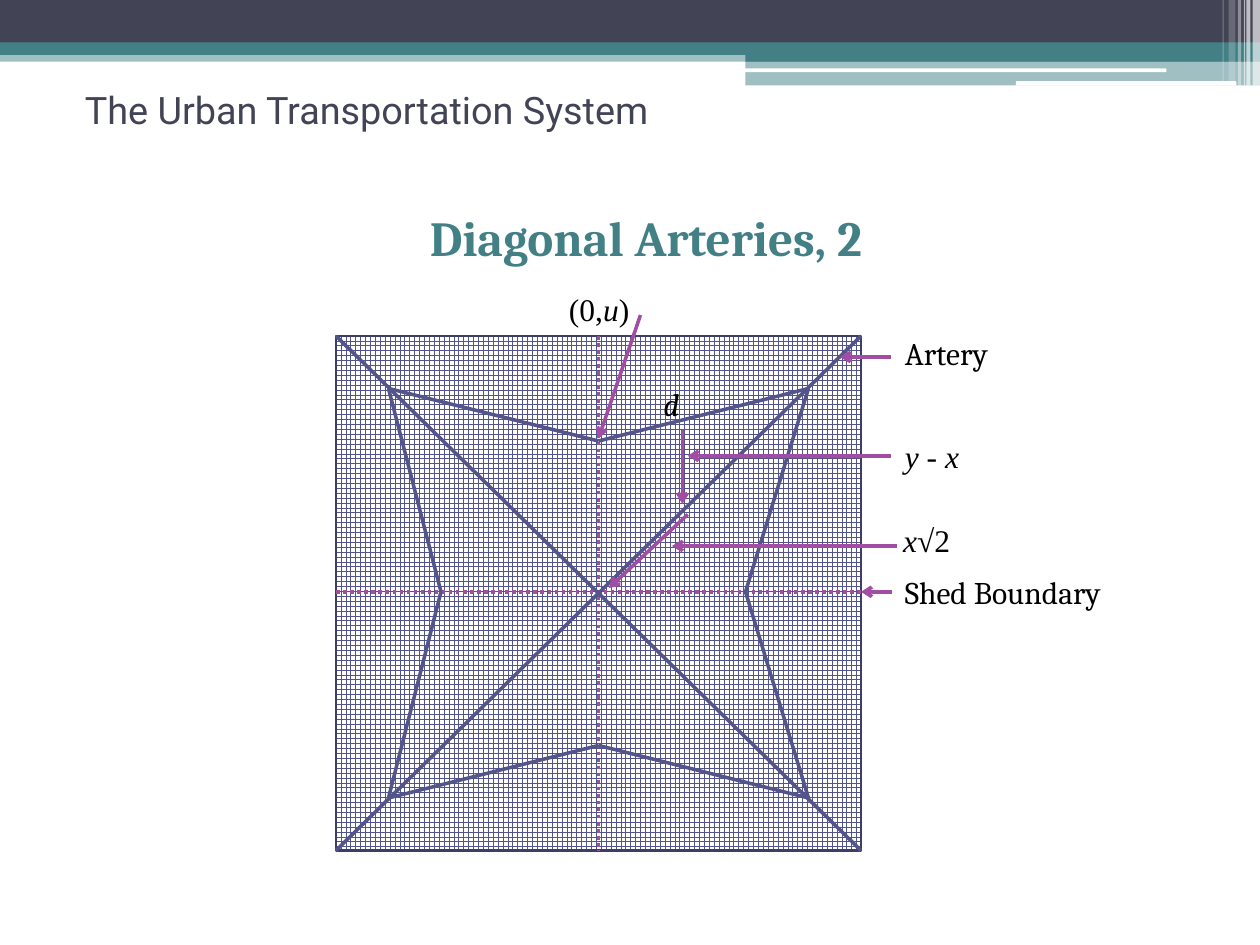
from lxml.etree import SubElement
from pptx import Presentation
from pptx.dml.color import RGBColor
from pptx.enum.dml import MSO_LINE, MSO_PATTERN
from pptx.enum.shapes import MSO_CONNECTOR, MSO_SHAPE
from pptx.enum.text import MSO_ANCHOR, PP_ALIGN
from pptx.oxml.ns import qn
from pptx.util import Pt

NAVY, TEAL, WHITE, BLACK = "424456", "438086", "FFFFFF", "000000"
INDIGO, EDGE, PURPLE = "53548A", "3D3E66", "A04DA3"
SERIF, SANS, MATH = "Cambria", "Roboto", "Times New Roman"

# left, top, width, height, colour, opacity in percent
BANDS = [
    (0, 28.8, 720, 6.5, TEAL, 50),
    (0, 0, 720, 24.5, NAVY, 100),
    (0, 24.2, 720, 7.2, TEAL, 100),
    (426, 28, 294, 7.2, TEAL, 100),
    (426, 34.9, 294, 14, TEAL, 50),
]
WHITE_BARS = [(425.5, 39.1, 241, 2.2), (580.5, 46.4, 126, 2.6)]
# left, width, height, opacity in percent
STRIPES = [
    (715.8, 4.2, 48.9, 65), (712.3, 2.2, 48.9, 65), (710.8, 0.7, 48.9, 60),
    (707.3, 2, 48.9, 40), (702, 4, 46.2, 20), (698.6, 0.7, 46.2, 30),
]

LEFT, TOP, RIGHT, BOTTOM = 192, 192, 492, 486
CENTER_X, CENTER_Y = 342, 338.2
BOUNDARIES = [((CENTER_X, TOP), (CENTER_X, BOTTOM)),
              ((RIGHT, CENTER_Y), (LEFT, CENTER_Y))]
ARTERIES = [((LEFT, BOTTOM), (RIGHT, TOP)), ((RIGHT, BOTTOM), (LEFT, TOP))]
STAR = [(222, 222), (CENTER_X, 252), (462, 222), (426, CENTER_Y),
        (462, 456), (CENTER_X, 426), (222, 456), (252, CENTER_Y)]
ARROWS = [
    ((393, 294), (348, 336)),
    ((366, 180), (342, 250.5)),
    ((390, 246), (390, 288)),
    ((509, 204), (480, 204)),
    ((509, 260.5), (393, 260.5)),
    ((512.5, 312), (384, 312)),
    ((510, CENTER_Y), (RIGHT, CENTER_Y)),
]
# left, top, width, font, spans of (text, italic)
LABELS = [
    (510, 187.5, 183.6, SERIF, [("Artery", False)]),
    (510, 324, 183.6, SERIF, [("Shed Boundary", False)]),
    (510, 246.2, 183.6, MATH, [("y - x", True)]),
    (509, 294, 183.6, MATH, [("x", True), ("√2", False)]),
    (318, 162, 96, MATH, [("(0,", False), ("u", True), (")", False)]),
    (372, 216.5, 36, SERIF, [("d", True)]),
]

deck = Presentation()
deck.slide_width, deck.slide_height = Pt(720), Pt(540)
page = deck.slides.add_slide(deck.slide_layouts[6])


def rgb(color):
    return RGBColor.from_string(color)


def add_block(left, top, width, height, color, opacity=100, kind=MSO_SHAPE.RECTANGLE):
    block = page.shapes.add_shape(kind, Pt(left), Pt(top), Pt(width), Pt(height))
    block.shadow.inherit = False
    block.line.fill.background()
    block.fill.solid()
    block.fill.fore_color.rgb = rgb(color)
    if opacity < 100:
        tint = block.fill._xPr.find(".//" + qn("a:srgbClr"))
        SubElement(tint, qn("a:alpha"), val=str(opacity * 1000))
    return block


def add_line(start, end, color, dash=None, arrow=False):
    line = page.shapes.add_connector(MSO_CONNECTOR.STRAIGHT, *map(Pt, start + end))
    line.line.color.rgb = rgb(color)
    line.line.width = Pt(2)
    if dash:
        line.line.dash_style = dash
    if arrow:
        SubElement(line.line._get_or_add_ln(), qn("a:tailEnd"), type="arrow")
    SubElement(line._element.spPr, qn("a:effectLst"))


def add_text(spans, left, top, width, height, font, size=18, color=BLACK, bold=False,
             align=PP_ALIGN.LEFT, anchor=MSO_ANCHOR.TOP, inset=7.2):
    """Add a one-paragraph box; spans are (text, italic) pairs."""
    box = page.shapes.add_textbox(Pt(left), Pt(top), Pt(width), Pt(height))
    frame = box.text_frame
    frame.word_wrap = True
    frame.vertical_anchor = anchor
    frame.margin_left = Pt(inset)
    para = frame.paragraphs[0]
    para.alignment = align
    for text, italic in spans:
        span = para.add_run()
        span.text = text
        span.font.name, span.font.size = font, Pt(size)
        span.font.bold, span.font.italic = bold, italic
        span.font.color.rgb = rgb(color)


for band in BANDS:
    add_block(*band)
for bar in WHITE_BARS:
    add_block(*bar, WHITE, kind=MSO_SHAPE.ROUNDED_RECTANGLE)
for left, width, height, opacity in STRIPES:
    add_block(left, 0, width, height, WHITE, opacity)

add_text([("The Urban Transportation System", False)], 36, 42, 648, 41, SANS,
         size=21.6, color=NAVY, anchor=MSO_ANCHOR.MIDDLE, inset=12.5)
add_text([("Diagonal Arteries, 2", False)], 36, 115, 648, 419, SERIF, size=28,
         color=TEAL, bold=True, align=PP_ALIGN.CENTER, inset=25.2)

city = add_block(LEFT, TOP, RIGHT - LEFT, BOTTOM - TOP, WHITE)
city.fill.patterned()
city.fill.pattern = MSO_PATTERN.LARGE_GRID
city.fill.fore_color.rgb = rgb(INDIGO)
city.fill.back_color.rgb = rgb(WHITE)
city.line.color.rgb = rgb(EDGE)
city.line.width = Pt(1.5)

for start, end in BOUNDARIES:
    add_line(start, end, PURPLE, dash=MSO_LINE.ROUND_DOT)
for start, end in ARTERIES + list(zip(STAR, STAR[1:] + STAR[:1])):
    add_line(start, end, INDIGO)
for left, top, width, font, spans in LABELS:
    add_text(spans, left, top, width, 28.8, font)
for start, end in ARROWS:
    add_line(start, end, PURPLE, arrow=True)

deck.save("out.pptx")
